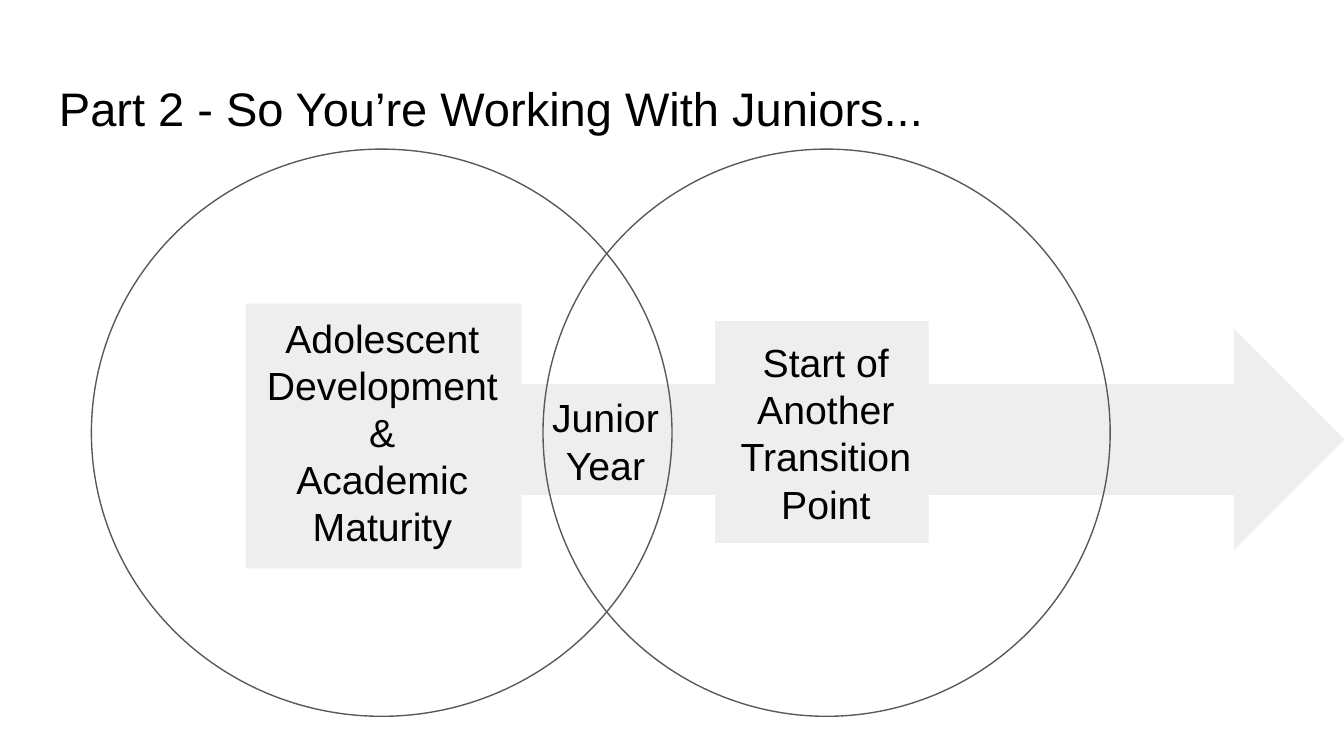
from dataclasses import dataclass

from pptx import Presentation
from pptx.dml.color import RGBColor
from pptx.enum import shapes, text
from pptx.util import Inches, Pt


@dataclass(frozen=True)
class Theme:
    font: str = "Arial"
    ink: str = "000000"
    panel: str = "EEEEEE"
    outline: str = "595959"
    title_size: float = 25.2
    body_size: float = 21
    line_width: float = 0.75


class SlideBuilder:
    def __init__(self, slide, theme):
        self.slide = slide
        self.theme = theme

    def shape(self, kind, box, fill=None, line=None, rotation=0):
        shape = self.slide.shapes.add_shape(kind, *map(Inches, box))
        shape.shadow.inherit = False
        shape.rotation = rotation
        if fill:
            shape.fill.solid()
            shape.fill.fore_color.rgb = RGBColor.from_string(fill)
        else:
            shape.fill.background()
        if line:
            shape.line.color.rgb = RGBColor.from_string(line)
            shape.line.width = Pt(self.theme.line_width)
        else:
            shape.line.fill.background()
        return shape

    def panel(self, box):
        return self.shape(shapes.MSO_SHAPE.RECTANGLE, box, fill=self.theme.panel)

    def arrow(self, box):
        """Draw a block arrow that points right; box is its upright frame."""
        return self.shape(shapes.MSO_SHAPE.DOWN_ARROW, box,
                          fill=self.theme.panel, rotation=270)

    def circle(self, box):
        return self.shape(shapes.MSO_SHAPE.OVAL, box, line=self.theme.outline)

    def text(self, content, box, size=None, align=text.PP_ALIGN.CENTER):
        """Add a text box; each newline starts a paragraph, \\v breaks a line."""
        frame = self.slide.shapes.add_textbox(*map(Inches, box)).text_frame
        frame.word_wrap = True
        frame.vertical_anchor = text.MSO_ANCHOR.TOP
        frame.margin_left = frame.margin_right = Inches(0.1)
        frame.margin_top = frame.margin_bottom = Inches(0.1)
        frame.text = content
        for paragraph in frame.paragraphs:
            paragraph.alignment = align
            for run in paragraph.runs:
                run.font.name = self.theme.font
                run.font.size = Pt(size or self.theme.body_size)
                run.font.color.rgb = RGBColor.from_string(self.theme.ink)


def main():
    presentation = Presentation()
    presentation.slide_width = Inches(10)
    presentation.slide_height = Inches(10 * 9 / 16)
    theme = Theme()
    slide = presentation.slides.add_slide(presentation.slide_layouts[6])
    builder = SlideBuilder(slide, theme)

    builder.panel((5.32, 2.39, 1.59, 1.65))
    builder.panel((1.83, 2.26, 2.05, 1.97))
    builder.arrow((6.08, 0.17, 1.65, 6.2))
    builder.circle((0.68, 1.11, 4.32, 4.22))
    builder.circle((4.04, 1.11, 4.22, 4.22))

    builder.text("Part 2 - So You’re Working With Juniors...",
                 (0.34, 0.49, 9.32, 0.63), size=theme.title_size,
                 align=text.PP_ALIGN.LEFT)
    builder.text("Junior\nYear", (3.95, 2.83, 1.11, 0.91))
    builder.text("Adolescent Development\n&\nAcademic Maturity",
                 (1.71, 2.24, 2.27, 1.97))
    builder.text("Start of\nAnother Transition\vPoint",
                 (5.01, 2.42, 2.27, 1.62))

    presentation.save("out.pptx")


if __name__ == "__main__":
    main()
